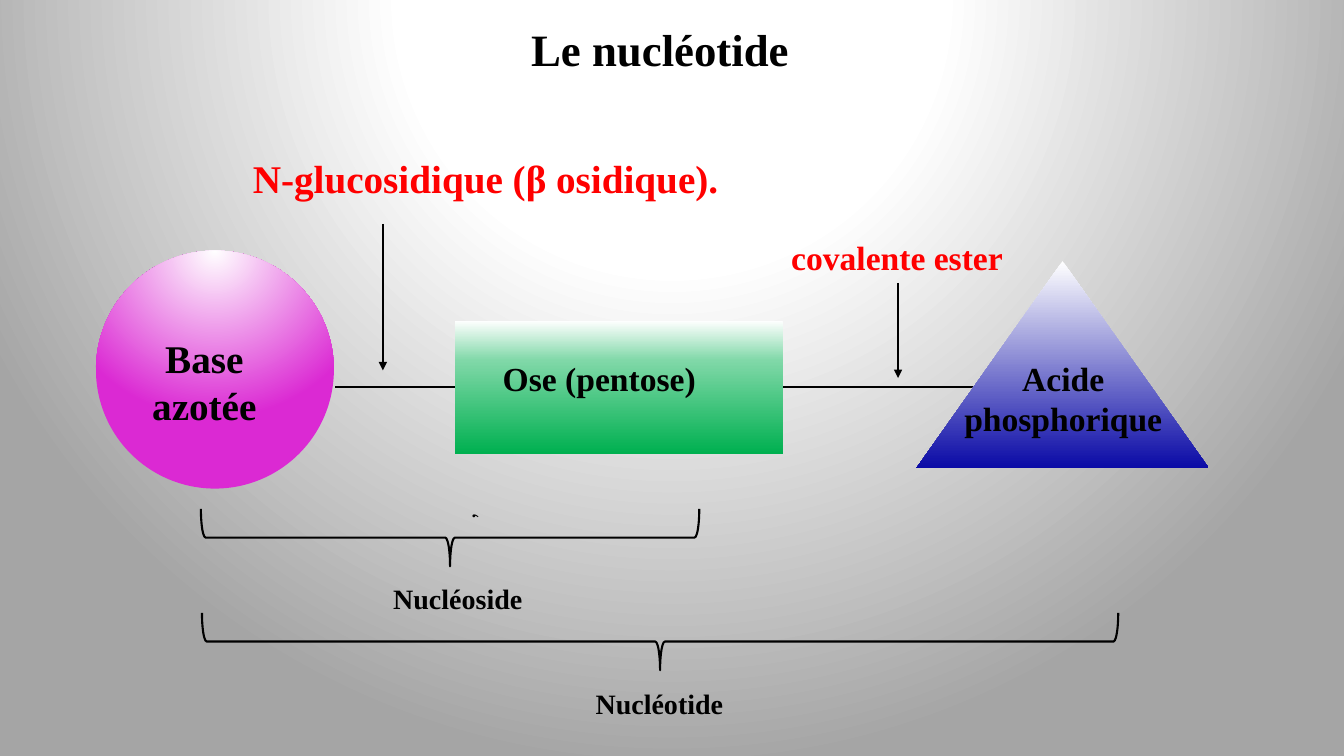
from lxml import etree
from pptx import Presentation
from pptx.dml.color import RGBColor
from pptx.enum import shapes, text
from pptx.oxml import ns, parse_xml
from pptx.util import Pt

COLORS = {"black": "000000", "red": "FF0000", "white": "FFFFFF", "grey": "A5A5A5",
          "magenta": "DB29D3", "mint": "80D8A8", "green": "00B050", "blue": "0A0AA6"}
SERIF = "Times New Roman"
GLOW = '<a:path path="circle"><a:fillToRect l="50000" t="-80000" r="50000" b="180000"/></a:path>'
DOWN = '<a:lin ang="5400000" scaled="0"/>'


def set_gradient(owner, fill, stops, direction):
    fill.gradient()
    gradient = owner.element.find(".//" + ns.qn("a:gradFill"))
    marks = "".join(f'<a:gs pos="{percent * 1000}"><a:srgbClr val="{COLORS[color]}"/></a:gs>'
                    for percent, color in stops)
    gradient.getparent().replace(gradient, parse_xml(
        f'<a:gradFill {ns.nsdecls("a")} rotWithShape="1"><a:gsLst>{marks}</a:gsLst>'
        f'{direction}</a:gradFill>'))


def add_span(frame, wording, size, color, font, bold, align):
    para = frame.paragraphs[0]
    para.alignment = align
    span = para.add_run()
    span.text = wording
    span.font.size = Pt(size)
    span.font.name = font
    span.font.bold = bold
    span.font.color.rgb = RGBColor.from_string(COLORS[color])


deck = Presentation()
deck.slide_width, deck.slide_height = Pt(960), Pt(540)
page = deck.slides.add_slide(deck.slide_layouts[6])
set_gradient(page, page.background.fill, [(0, "white"), (35, "white"), (100, "grey")], GLOW)

# Bonds between the parts, and arrows that point at them
connectors = []
for x1, y1, x2, y2, is_arrow in [
    (325, 276.5, 239, 276.5, False),
    (699, 276.5, 541, 276.5, False),
    (273.5, 160, 273.5, 264.5, True),
    (641.5, 202, 641.5, 270, True),
]:
    connector = page.shapes.add_connector(shapes.MSO_CONNECTOR.STRAIGHT,
                                          Pt(x1), Pt(y1), Pt(x2), Pt(y2))
    connector.line.width = Pt(1.5)
    connector.line.color.rgb = RGBColor.from_string(COLORS["black"])
    if is_arrow:
        etree.SubElement(connector.line._get_or_add_ln(), ns.qn("a:tailEnd"), type="triangle")
    etree.SubElement(connector.element.spPr, ns.qn("a:effectLst"))
    connectors.append(connector)

# Base, sugar and acid
kinds = shapes.MSO_SHAPE
parts = []
for kind, left, top, width, height, stops, direction in [
    (kinds.OVAL, 68.5, 179, 170, 170, [(0, "white"), (100, "magenta")], GLOW),
    (kinds.RECTANGLE, 325, 229, 234, 95,
     [(0, "white"), (30, "mint"), (100, "green")], DOWN),
    (kinds.ISOSCELES_TRIANGLE, 654.5, 186.5, 209, 148, [(0, "white"), (100, "blue")], DOWN),
]:
    part = page.shapes.add_shape(kind, Pt(left), Pt(top), Pt(width), Pt(height))
    part.shadow.inherit = False
    part.line.fill.background()
    set_gradient(part, part.fill, stops, direction)
    parts.append(part)
connectors[0].begin_connect(parts[1], 1)

# Braces under the parts, turned to open upwards
braces = []
for left, top, length in [(301, 206, 356), (451, 131, 654.5)]:
    brace = page.shapes.add_shape(kinds.LEFT_BRACE, Pt(left), Pt(top), Pt(41), Pt(length))
    brace.rotation = 270
    brace.shadow.inherit = False
    brace.fill.background()
    brace.line.width = Pt(1.5)
    brace.line.color.rgb = RGBColor.from_string(COLORS["black"])
    braces.append(brace)
braces[0].text_frame.vertical_anchor = text.MSO_ANCHOR.MIDDLE
add_span(braces[0].text_frame, " ,", 18, "black", "Calibri", False, text.PP_ALIGN.CENTER)

# Title and labels
center, start = text.PP_ALIGN.CENTER, text.PP_ALIGN.LEFT
for wording, left, top, width, height, size, color, align, wraps in [
    ("Le nucléotide", -8.5, 12, 960, 46, 32, "black", center, True),
    ("Acide phosphorique", 664, 252, 191, 65.5, 24, "black", center, True),
    ("Ose (pentose)", 352, 252, 189, 36, 24, "black", start, True),
    ("Base azotée", 92, 235.5, 108, 75, 28, "black", center, True),
    ("Nucléoside", 212.5, 412, 229, 31.5, 20, "black", center, True),
    ("Nucléotide", 356.5, 487, 229, 31.5, 20, "black", center, True),
    ("N-glucosidique (β osidique).", 173.5, 106.5, 358, 41, 28, "red", start, False),
    ("covalente ester", 558, 166, 167, 36, 24, "red", start, False),
]:
    box = page.shapes.add_textbox(Pt(left), Pt(top), Pt(width), Pt(height))
    box.text_frame.word_wrap = wraps
    box.text_frame.auto_size = text.MSO_AUTO_SIZE.SHAPE_TO_FIT_TEXT
    add_span(box.text_frame, wording, size, color, SERIF, True, align)

deck.save("out.pptx")
